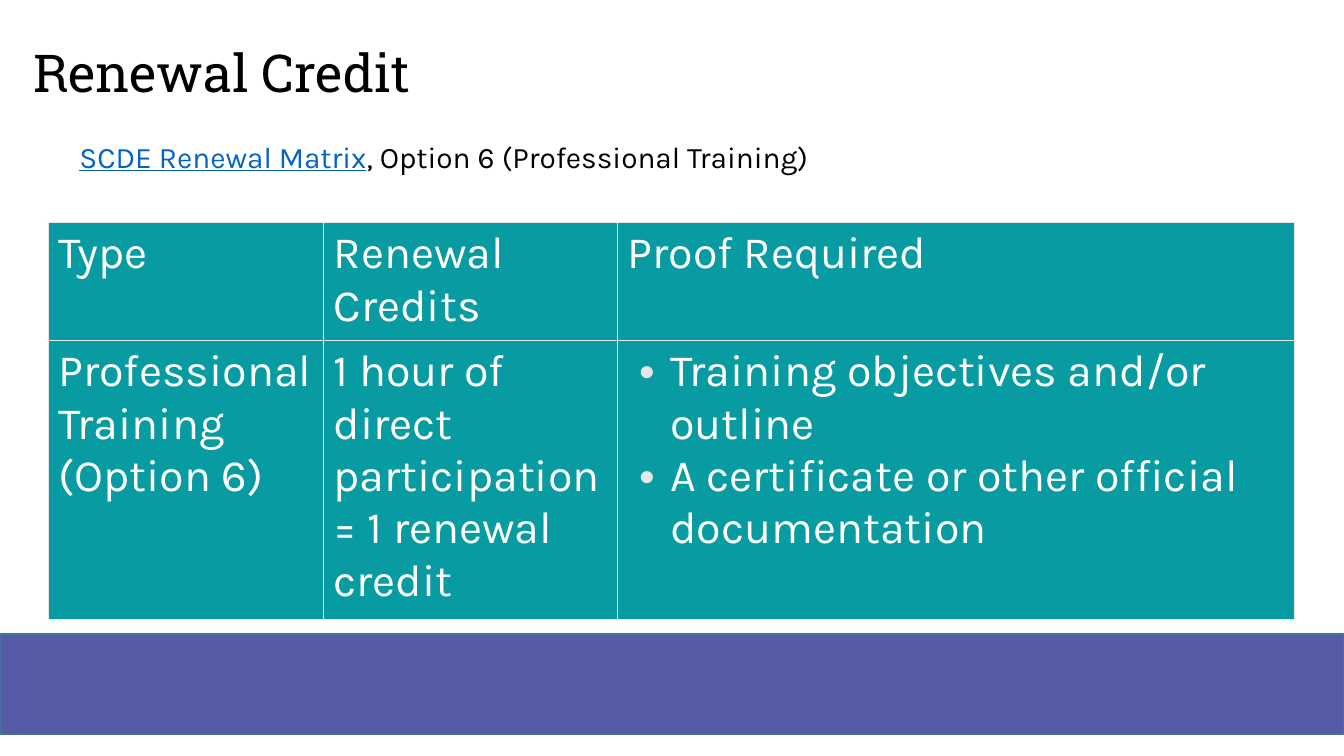
from lxml import etree
from pptx import Presentation
from pptx import util as u
from pptx.dml.color import RGBColor
from pptx.enum import shapes, text
from pptx.oxml import ns

COLOURS = {
    "black": "000000",
    "white": "FFFFFF",
    "link": "0563C1",
    "teal": "089CA2",
    "grey": "E7E6E6",
    "violet": "565BA7",
    "edge": "43739E",
}
COLUMN_WIDTHS = [196.56, 210.24, 483.12]
ROW_HEIGHTS = [82, 194]
ROWS = [
    [["Type"], ["Renewal Credits"], ["Proof Required"]],
    [
        ["Professional Training (Option 6)"],
        ["1 hour of direct participation = 1 renewal credit"],
        ["Training objectives and/or outline",
         "A certificate or other official documentation"],
    ],
]


def colour(name):
    return RGBColor.from_string(COLOURS[name])


def add_element(parent, tag, **attributes):
    element = etree.SubElement(parent, ns.qn(tag))
    for key, value in attributes.items():
        element.set(key, str(value))
    return element


def add_span(para, words, font="Karla", size=32, fill="white", underline=None):
    span = para.add_run()
    span.text = words
    span.font.name = font
    span.font.size = u.Pt(size)
    span.font.color.rgb = colour(fill)
    span.font.underline = underline
    return span


def add_line_box(page, box, anchor):
    frame = page.shapes.add_textbox(*map(u.Pt, box)).text_frame
    frame.word_wrap = True
    frame.vertical_anchor = anchor
    para = frame.paragraphs[0]
    para.line_spacing = 0.9
    return para


def add_footer_band(page, box):
    band = page.shapes.add_shape(shapes.MSO_SHAPE.RECTANGLE, *map(u.Pt, box))
    band.shadow.inherit = False
    band.fill.solid()
    band.fill.fore_color.rgb = colour("violet")
    band.line.color.rgb = colour("edge")
    band.line.width = u.Pt(1)


def add_title(page, box):
    para = add_line_box(page, box, text.MSO_ANCHOR.MIDDLE)
    add_span(para, "Renewal Credit", font="Roboto Slab", size=37.3, fill="black")


def add_subtitle(page, box):
    para = add_line_box(page, box, text.MSO_ANCHOR.TOP)
    add_span(para, "SCDE Renewal Matrix", size=21.3, fill="link", underline=True)
    add_span(para, ", Option 6 (Professional Training)", size=21.3, fill="black")


def add_bullet(para):
    properties = para._p.get_or_add_pPr()
    properties.set("marL", str(u.Pt(30.24)))
    properties.set("indent", str(-u.Pt(22.32)))
    bullet_colour = add_element(properties, "a:buClr")
    add_element(bullet_colour, "a:srgbClr", val=COLOURS["grey"])
    add_element(properties, "a:buFont", typeface="Arial")
    add_element(properties, "a:buChar", char="•")


def style_cell(cell):
    properties = cell._tc.get_or_add_tcPr()
    for side in ("a:lnL", "a:lnR", "a:lnT", "a:lnB"):
        border = add_element(properties, side, w=u.Pt(1))
        fill = add_element(border, "a:solidFill")
        add_element(fill, "a:srgbClr", val=COLOURS["grey"])
    cell.fill.solid()
    cell.fill.fore_color.rgb = colour("teal")


def fill_cell(cell, lines):
    style_cell(cell)
    frame = cell.text_frame
    for index, words in enumerate(lines):
        para = frame.add_paragraph() if index else frame.paragraphs[0]
        if len(lines) > 1:
            add_bullet(para)
        add_span(para, words)


def add_credit_table(page, left, top):
    box = (left, top, sum(COLUMN_WIDTHS), sum(ROW_HEIGHTS))
    frame = page.shapes.add_table(len(ROWS), len(COLUMN_WIDTHS), *map(u.Pt, box))
    table = frame.table
    table.first_row = False
    table.horz_banding = False
    for column, width in zip(table.columns, COLUMN_WIDTHS):
        column.width = u.Pt(width)
    for row, height, contents in zip(table.rows, ROW_HEIGHTS, ROWS):
        row.height = u.Pt(height)
        for cell, lines in zip(row.cells, contents):
            fill_cell(cell, lines)


def main():
    deck = Presentation()
    deck.slide_width, deck.slide_height = u.Pt(960), u.Pt(540)
    page = deck.slides.add_slide(deck.slide_layouts[6])
    add_footer_band(page, (0, 452.88, 960, 72))
    add_title(page, (16.56, 23.76, 894.24, 60.48))
    add_subtitle(page, (49.68, 98.64, 828, 45.36))
    add_credit_table(page, 34.56, 159.12)
    deck.save("out.pptx")


if __name__ == "__main__":
    main()
